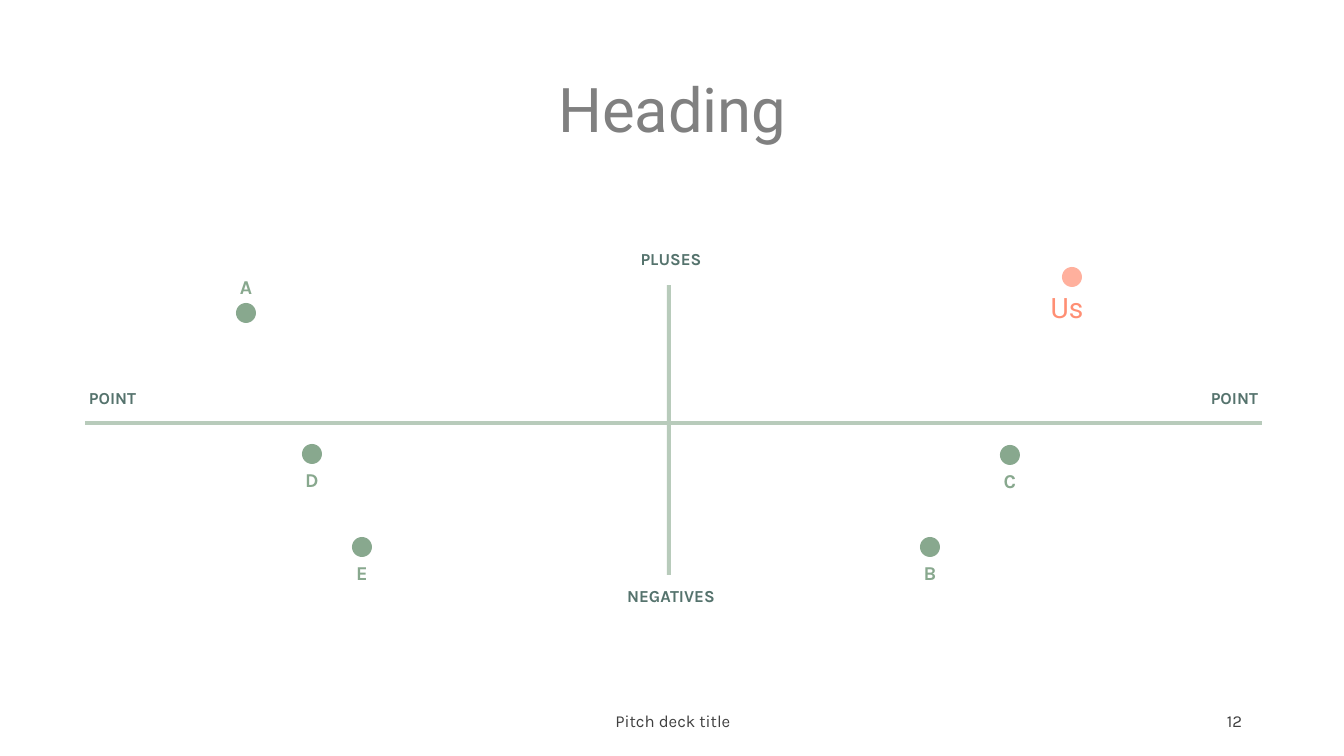
from pptx import Presentation
from pptx.dml.color import RGBColor
from pptx.enum.shapes import MSO_SHAPE
from pptx.enum.text import MSO_ANCHOR, PP_ALIGN
from pptx.util import Pt

GREY = RGBColor(0x80, 0x80, 0x80)
DARK = RGBColor(0x40, 0x40, 0x40)
PINE = RGBColor(0x55, 0x73, 0x6D)
SAGE = RGBColor(0x88, 0xA8, 0x8E)
MIST = RGBColor(0xB8, 0xCB, 0xBB)
CORAL = RGBColor(0xFF, 0x8F, 0x74)
PEACH = RGBColor(0xFF, 0xB0, 0x9D)

LEFT, MID, RIGHT = PP_ALIGN.LEFT, PP_ALIGN.CENTER, PP_ALIGN.RIGHT
WIDE, HIGH = 1344, 756
SCALE = 12192000 / WIDE

# Content: all lengths in px
TITLE = ("Heading", (93, 40, 1159, 146))
ENDS = [  # text, left, top, alignment
    ("PLUSES", 550, 246, MID),
    ("POINT", 79, 385, LEFT),
    ("POINT", 1026, 385, RIGHT),
    ("NEGATIVES", 550, 583, MID),
]
FOOT = [  # text, left, width, alignment
    ("Pitch deck title", 446, 454, MID),
    ("12", 950, 302, RIGHT),
]
ARMS = [  # left, top, width, height
    (667, 285, 4, 139),
    (85, 421, 590, 4),
    (674, 421, 588, 4),
    (667, 424, 4, 151),
]
RIVALS = [  # name, dot centre, label offset from it
    ("A", 246, 313, -43),
    ("D", 312, 454, 9),
    ("C", 1010, 455, 9),
    ("E", 362, 547, 9),
    ("B", 930, 547, 9),
]
US = ("Us", 1072, 277)
DOT = 20

# Formats
HEAD = {"name": "Roboto", "size": Pt(44), "bold": False}
END = {"name": "Karla", "size": Pt(12), "bold": True}
NAME = {"name": "Karla", "size": Pt(14), "bold": True}
OURS = {"name": "Roboto", "size": Pt(20), "bold": False}
NOTE = {"name": "Karla", "size": Pt(12), "bold": False}


def emu(box):
    return [round(v * SCALE) for v in box]


def write(shape, text, look, color, align=MID, anchor=MSO_ANCHOR.TOP, space=1.0):
    frame = shape.text_frame
    frame.word_wrap = True
    frame.vertical_anchor = anchor
    para = frame.paragraphs[0]
    para.alignment = align
    para.line_spacing = space
    run = para.add_run()
    run.text = text
    for key, value in look.items():
        setattr(run.font, key, value)
    run.font.color.rgb = color


def label(slide, box, *args, **opts):
    write(slide.shapes.add_textbox(*emu(box)), *args, **opts)


def solid(slide, kind, box, color):
    shape = slide.shapes.add_shape(kind, *emu(box))
    shape.shadow.inherit = False
    shape.fill.solid()
    shape.fill.fore_color.rgb = color
    shape.line.fill.background()


def dot(slide, x, y, color):
    solid(slide, MSO_SHAPE.OVAL, (x - DOT / 2, y - DOT / 2, DOT, DOT), color)


def main():
    deck = Presentation()
    deck.slide_width, deck.slide_height = emu((WIDE, HIGH))
    slide = deck.slides.add_slide(deck.slide_layouts[5])

    # Title
    text, box = TITLE
    title = slide.shapes.title
    title.left, title.top, title.width, title.height = emu(box)
    write(title, text, HEAD, GREY, anchor=MSO_ANCHOR.MIDDLE, space=0.9)

    # Axes and their ends
    for arm in ARMS:
        solid(slide, MSO_SHAPE.RECTANGLE, arm, MIST)
    for text, x, y, align in ENDS:
        label(slide, (x, y, 242, 30), text, END, PINE, align, space=0.9)

    # Rivals
    for text, x, y, drop in RIVALS:
        dot(slide, x, y, SAGE)
        label(slide, (x - 116, y + drop, 232, 34), text, NAME, SAGE)

    # Us
    text, x, y = US
    dot(slide, x, y, PEACH)
    label(slide, (x - 88, y + 9, 166, 44), text, OURS, CORAL)

    # Footer
    for text, x, width, align in FOOT:
        label(slide, (x, 701, width, 40), text, NOTE, DARK, align,
              anchor=MSO_ANCHOR.MIDDLE)

    deck.save("out.pptx")


if __name__ == "__main__":
    main()
